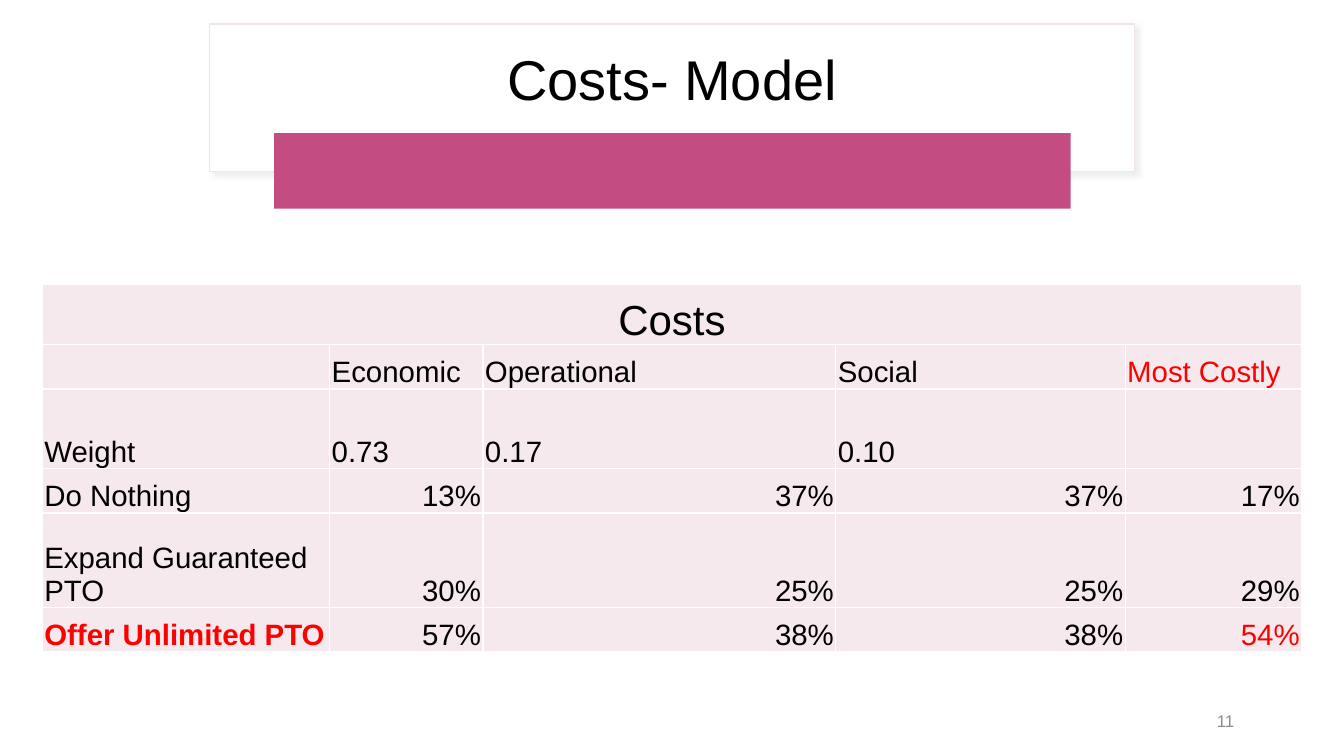
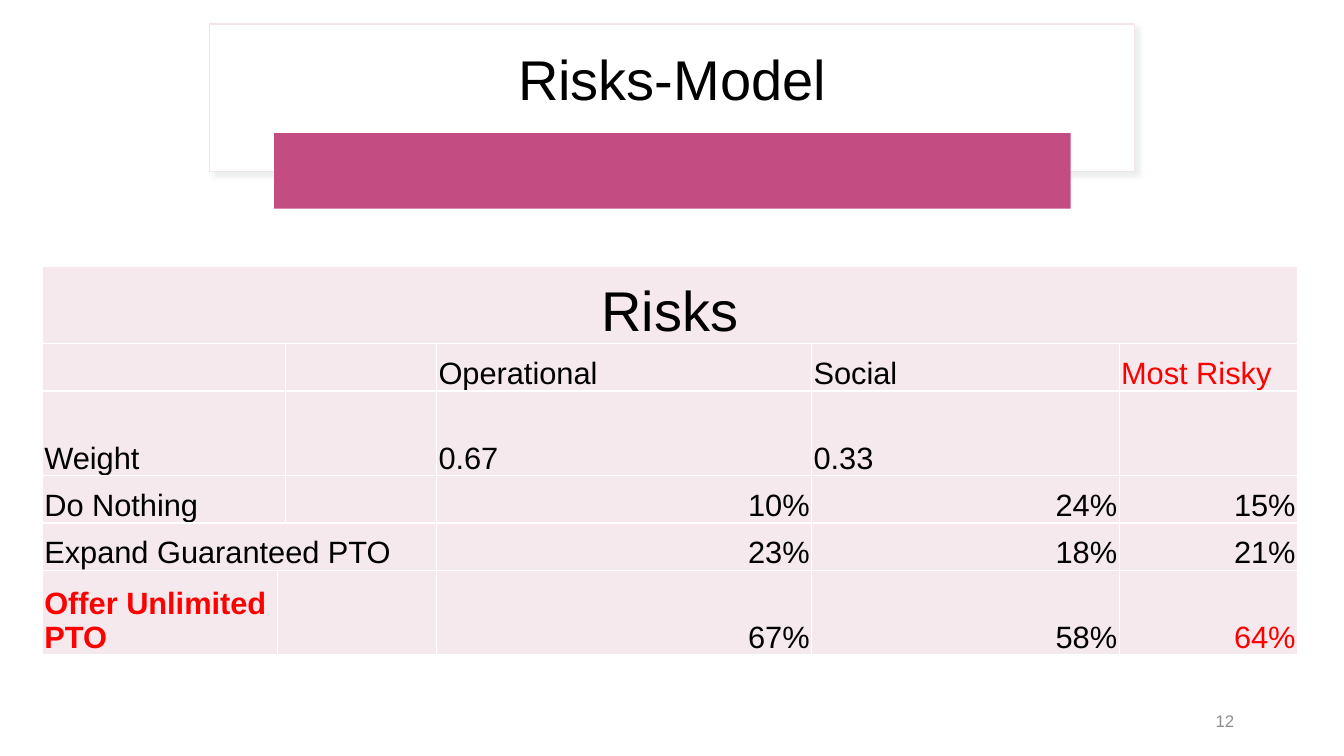
import pptx
import pptx.util
import pptx.dml.color
import pptx.enum.shapes
import pptx.enum.text
import pptx.oxml
import pptx.oxml.ns

Inches = pptx.util.Inches
Pt = pptx.util.Pt
ALIGN = pptx.enum.text.PP_ALIGN
ANCHOR = pptx.enum.text.MSO_ANCHOR
SHAPE = pptx.enum.shapes.MSO_SHAPE
COLORS = {
    "white": "FFFFFF",
    "black": "000000",
    "band": "C34D83",
    "cell": "F5E9ED",
    "frame": "F0E5EA",
    "shadow": "BCCAC3",
    "accent": "FF0000",
    "number": "8C8C8C",
}


def rgb(name):
    return pptx.dml.color.RGBColor.from_string(COLORS[name])


class Deck:
    font = "Arial"

    def __init__(self):
        self.prs = pptx.Presentation()
        self.prs.slide_width = Inches(13.33)
        self.prs.slide_height = Inches(7.5)
        self.slide = None

    def new_slide(self, title, number):
        self.slide = self.prs.slides.add_slide(self.prs.slide_layouts[5])
        self.heading(title)
        self.page_number(number)

    def add_text(self, paragraph, text, size, color="black", align=ALIGN.LEFT, bold=False):
        paragraph.alignment = align
        run = paragraph.add_run()
        run.text = text
        run.font.name = self.font
        run.font.size = Pt(size)
        run.font.bold = bold
        run.font.color.rgb = rgb(color)

    def block(self, kind, left, top, width, height, fill):
        shape = self.slide.shapes.add_shape(
            kind, Inches(left), Inches(top), Inches(width), Inches(height))
        shape.shadow.inherit = False
        shape.fill.solid()
        shape.fill.fore_color.rgb = rgb(fill)
        shape.line.fill.background()
        return shape

    def heading(self, text):
        frame = self.block(SHAPE.RECTANGLE, 2.08, 0.24, 9.17, 1.46, "white")
        frame.line.color.rgb = rgb("frame")
        frame.line.width = Pt(1)
        self.cast_shadow(frame)
        band = self.block(SHAPE.ROUNDED_RECTANGLE, 2.72, 1.32, 7.9, 0.75, "band")
        band.adjustments[0] = 0

        title = self.slide.shapes.title
        title.left, title.top = Inches(2.3), Inches(0.34)
        title.width, title.height = Inches(8.73), Inches(0.95)
        title.text_frame.vertical_anchor = ANCHOR.MIDDLE
        paragraph = title.text_frame.paragraphs[0]
        paragraph.line_spacing = 0.9
        self.add_text(paragraph, text, 40, align=ALIGN.CENTER)
        frame._element.addnext(title._element)

    def cast_shadow(self, shape):
        effects = shape._element.spPr.find(pptx.oxml.ns.qn("a:effectLst"))
        effects.append(pptx.oxml.parse_xml(
            f'<a:outerShdw {pptx.oxml.ns.nsdecls("a")} blurRad="{Pt(4)}" dist="{Pt(3)}" '
            f'dir="2700000" algn="tl" rotWithShape="0"><a:srgbClr val="{COLORS["shadow"]}">'
            '<a:alpha val="30000"/></a:srgbClr></a:outerShdw>'))

    def page_number(self, number):
        box = self.slide.shapes.add_textbox(
            Inches(9.34), Inches(6.95), Inches(3), Inches(0.4))
        box.text_frame.word_wrap = True
        box.text_frame.vertical_anchor = ANCHOR.MIDDLE
        self.add_text(box.text_frame.paragraphs[0], str(number), 12, "number", ALIGN.RIGHT)

    def style_cell(self, cell):
        cell.fill.solid()
        cell.fill.fore_color.rgb = rgb("cell")
        cell.vertical_anchor = ANCHOR.BOTTOM
        cell.margin_left = cell.margin_right = cell.margin_top = Inches(0.02)
        cell.margin_bottom = 0
        properties = cell._tc.get_or_add_tcPr()
        for position, side in enumerate(("lnL", "lnR", "lnT", "lnB")):
            properties.insert(position, pptx.oxml.parse_xml(
                f'<a:{side} {pptx.oxml.ns.nsdecls("a")} w="{Pt(1)}"><a:solidFill>'
                f'<a:srgbClr val="{COLORS["white"]}"/></a:solidFill></a:{side}>'))

    def score_table(self, top, widths, heights, rows, spans, caption_size, text_size):
        table = self.slide.shapes.add_table(
            len(rows), len(widths), Inches(0.42), Inches(top),
            Inches(sum(widths)), Inches(sum(heights))).table
        table.first_row = table.horz_banding = False
        for column, width in zip(table.columns, widths):
            column.width = Inches(width)
        for row, height in zip(table.rows, heights):
            row.height = Inches(height)

        last_row, last_column = len(rows) - 1, len(widths) - 1
        highlighted = {(1, last_column), (last_row, 0), (last_row, last_column)}
        for r, texts in enumerate(rows):
            for c in range(len(widths)):
                cell = table.cell(r, c)
                self.style_cell(cell)
                text = texts[c] if c < len(texts) else ""
                paragraph = cell.text_frame.paragraphs[0]
                if not text:
                    paragraph.font.size = Pt(text_size)
                elif r == 0:
                    self.add_text(paragraph, text, caption_size, align=ALIGN.CENTER)
                else:
                    self.add_text(
                        paragraph, text, text_size,
                        "accent" if (r, c) in highlighted else "black",
                        ALIGN.RIGHT if text.endswith("%") else ALIGN.LEFT,
                        (r, c) == (last_row, 0))
        for r, first, last in spans:
            table.cell(r, first).merge(table.cell(r, last))


def main():
    deck = Deck()

    deck.new_slide("Costs- Model", 11)
    deck.score_table(
        top=2.82,
        widths=[2.85, 1.52, 3.5, 2.87, 1.75],
        heights=[0.6, 0.44, 0.79, 0.44, 0.94, 0.44],
        rows=[
            ["Costs"],
            ["", "Economic", "Operational", "Social", "Most Costly"],
            ["Weight", "0.73", "0.17", "0.10"],
            ["Do Nothing", "13%", "37%", "37%", "17%"],
            ["Expand Guaranteed PTO", "30%", "25%", "25%", "29%"],
            ["Offer Unlimited PTO", "57%", "38%", "38%", "54%"],
        ],
        spans=[(0, 0, 4)],
        caption_size=30, text_size=21)

    deck.new_slide("Risks-Model", 12)
    deck.score_table(
        top=2.64,
        widths=[2.33, 0.08, 1.5, 3.72, 3.05, 1.77],
        heights=[0.77, 0.47, 0.84, 0.47, 0.47, 0.84],
        rows=[
            ["Risks"],
            ["", "", "", "Operational", "Social", "Most Risky"],
            ["Weight", "", "", "0.67", "0.33"],
            ["Do Nothing", "", "", "10%", "24%", "15%"],
            ["Expand Guaranteed PTO", "", "", "23%", "18%", "21%"],
            ["Offer Unlimited PTO", "", "", "67%", "58%", "64%"],
        ],
        spans=[(0, 0, 5), (1, 0, 1), (2, 0, 1), (3, 0, 1), (4, 0, 2), (5, 1, 2)],
        caption_size=40, text_size=22)

    deck.prs.save("out.pptx")


if __name__ == "__main__":
    main()
